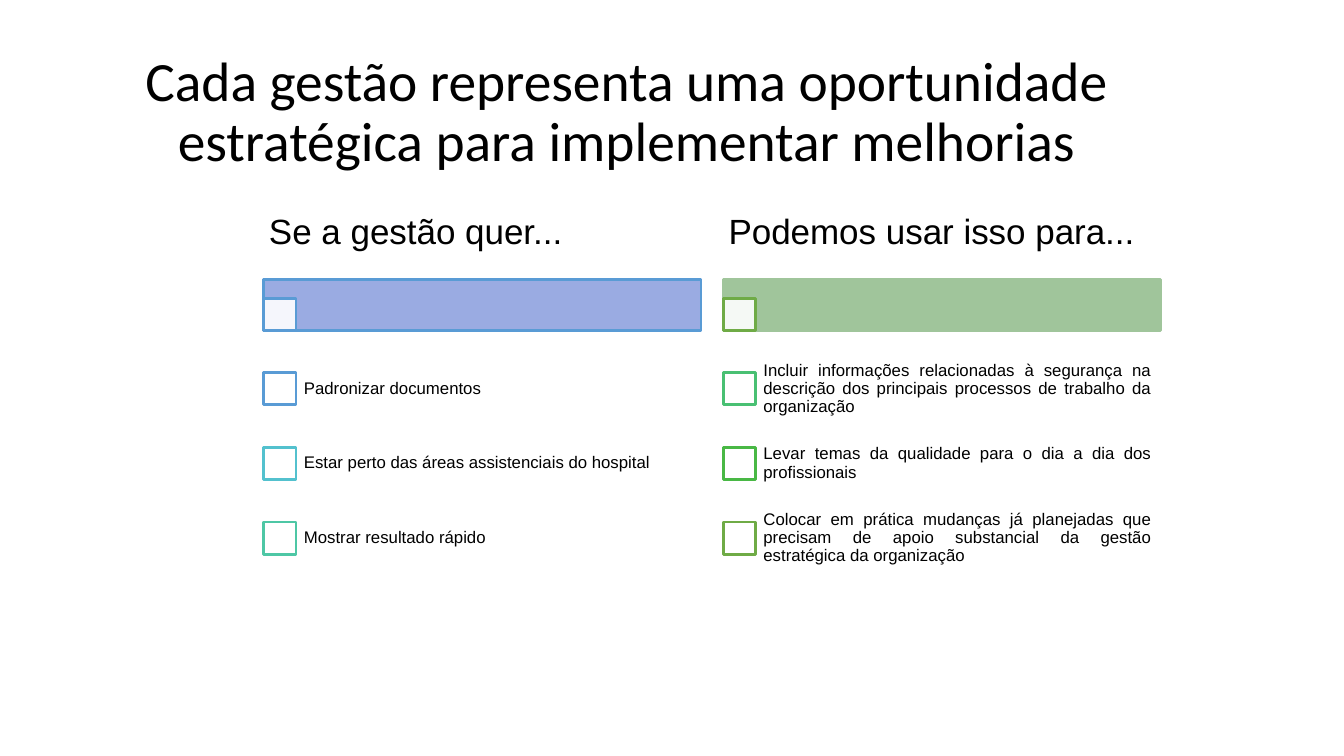
from lxml import etree
from pptx import Presentation
from pptx.dml.color import RGBColor
from pptx.enum.shapes import MSO_SHAPE as SHAPE
from pptx.enum.text import MSO_ANCHOR as ANCHOR, PP_ALIGN as ALIGN
from pptx.oxml.ns import qn
from pptx.util import Cm, Pt

COLORS = {
    "text": "000000", "white": "FFFFFF",
    "periwinkle": "9AABE2", "blue": "599BD5", "cyan": "53C1CE", "teal": "4EC7A5",
    "sage": "A0C59B", "mint": "49C073", "green": "49B845", "olive": "6FAB46",
}

# Heading, bar fill, bar line, bar check line, items with their check line
COLUMNS = [
    ("Se a gestão quer...", "periwinkle", "blue", "blue", [
        ("Padronizar documentos", "blue"),
        ("Estar perto das áreas assistenciais do hospital", "cyan"),
        ("Mostrar resultado rápido", "teal"),
    ]),
    ("Podemos usar isso para...", "sage", "sage", "olive", [
        ("Incluir informações relacionadas à segurança na descrição dos "
         "principais processos de trabalho da organização", "mint"),
        ("Levar temas da qualidade para o dia a dia dos profissionais", "green"),
        ("Colocar em prática mudanças já planejadas que precisam de apoio "
         "substancial da gestão estratégica da organização", "olive"),
    ]),
]

# Measures in centimetres
HEADING_H, BAR_H, CHECK = 2.34, 1.3, 0.81
ROWS_TOP, ROW_H, ITEM_INDENT = 4.16, 1.88, 0.78


def rgb(name):
    return RGBColor.from_string(COLORS[name])


def add_text(s, box, text, size, font, align, inset):
    tb = s.shapes.add_textbox(*map(Cm, box))
    tf = tb.text_frame
    tf.word_wrap = True
    tf.vertical_anchor = ANCHOR.MIDDLE
    tf.margin_left = tf.margin_right = Cm(inset[0])
    tf.margin_top = tf.margin_bottom = Cm(inset[1])
    p = tf.paragraphs[0]
    p.text = text
    p.alignment = align
    p.line_spacing = 0.9
    r = p.runs[0]
    r.font.size, r.font.name = Pt(size), font
    r.font.color.rgb = rgb("text")


def add_rect(s, box, fill, line, alpha=100):
    sp = s.shapes.add_shape(SHAPE.RECTANGLE, *map(Cm, box))
    sp.shadow.inherit = False
    sp.fill.solid()
    sp.fill.fore_color.rgb = rgb(fill)
    sp.line.color.rgb = rgb(line)
    sp.line.width = Pt(2)
    if alpha < 100:
        color = sp.fill._xPr.find(qn("a:solidFill"))[0]
        etree.SubElement(color, qn("a:alpha")).set("val", str(alpha * 1000))


def add_title(s, box):
    add_text(s, box, "Cada gestão representa uma oportunidade estratégica "
             "para implementar melhorias", 39.6, "Calibri", ALIGN.CENTER, (0.25, 0.13))


def add_item(s, box, text, color):
    x, y, w, h = box
    add_rect(s, (x, y + (h - CHECK) / 2, CHECK, CHECK), "white", color)
    add_text(s, (x + ITEM_INDENT, y, w - ITEM_INDENT, h), text,
             12, "Arial", ALIGN.JUSTIFY, (0.23, 0.23))


def add_column(s, box, heading, bar_fill, bar_line, check_line, items):
    x, y, w = box
    # Heading and bar, with a check box in the bar's lower left corner
    bar_y = y + HEADING_H
    add_rect(s, (x, bar_y, w, BAR_H), bar_fill, bar_line)
    add_rect(s, (x, bar_y + BAR_H - CHECK, CHECK, CHECK), "white", check_line, alpha=90)
    add_text(s, (x, y, w, HEADING_H), heading, 25, "Arial", ALIGN.JUSTIFY, (0.13, 0.08))
    # Checklist
    for i, (text, color) in enumerate(items):
        add_item(s, (x, y + ROWS_TOP + i * ROW_H, w, ROW_H), text, color)


def main():
    prs = Presentation()
    prs.slide_width, prs.slide_height = Cm(33.87), Cm(19.05)
    s = prs.slides.add_slide(prs.slide_layouts[6])
    add_title(s, (2.34, 1.02, 26.9, 3.68))
    for i, column in enumerate(COLUMNS):
        add_column(s, (6.65 + i * 11.58, 4.7, 11.02), *column)
    prs.save("out.pptx")


if __name__ == "__main__":
    main()
